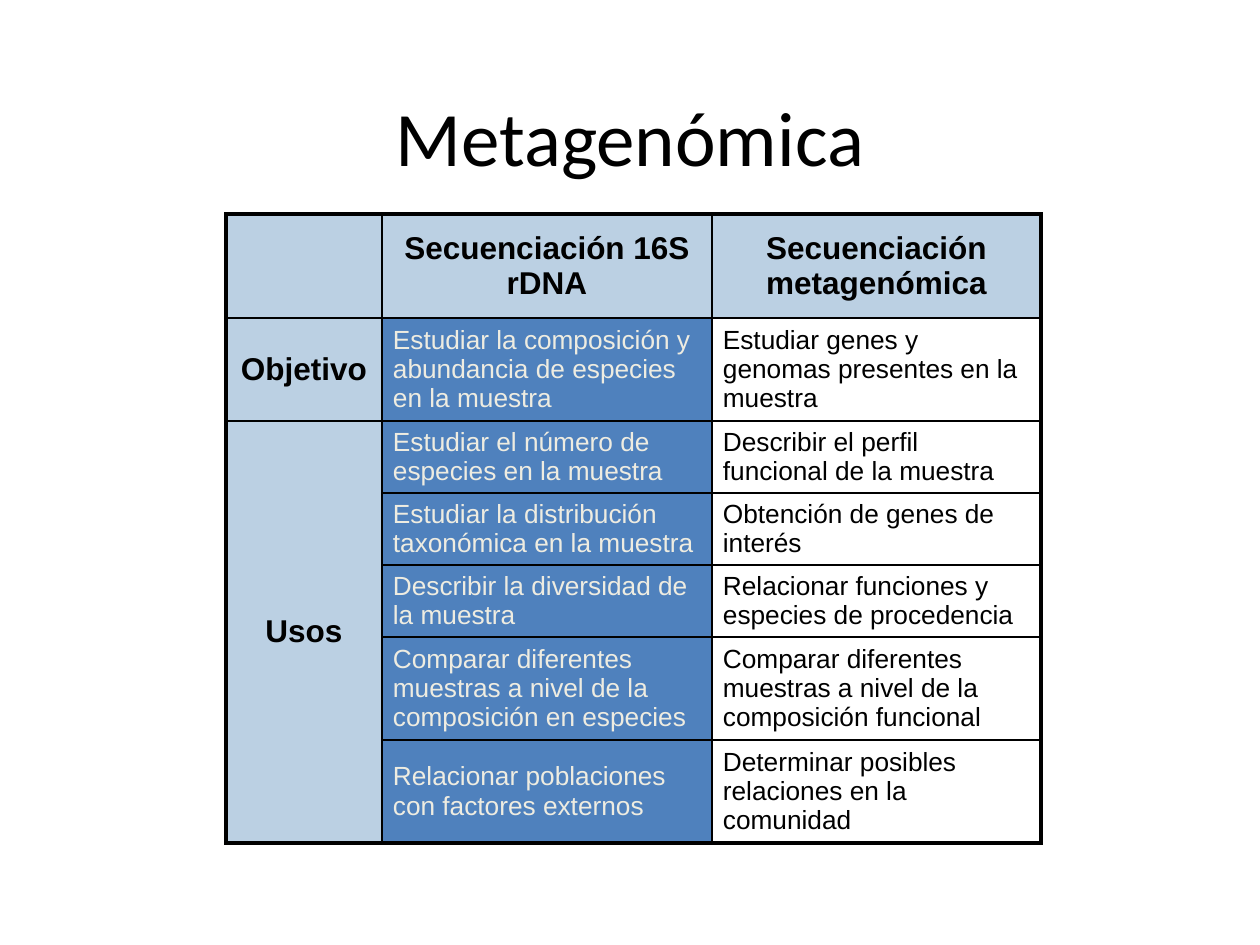
from dataclasses import dataclass

from lxml import etree
from pptx import Presentation
from pptx.dml.color import RGBColor
from pptx.enum.text import MSO_ANCHOR, PP_ALIGN
from pptx.oxml.ns import qn
from pptx.util import Emu, Pt

MIDDLE = MSO_ANCHOR.MIDDLE
LEFT, CENTER = PP_ALIGN.LEFT, PP_ALIGN.CENTER
TITLE_ONLY = 5

EMU_PER_PX = 914400 / 126
BLACK, CREAM = "000000", "EEECE1"
PALE_BLUE, BLUE = "BBD0E3", "4F81BD"
THIN, THICK = 1, 2.25

COLUMN_WIDTHS = [156, 330, 329]
ROW_HEIGHTS = [104, 103, 72, 72, 72, 103, 103]
USES_ROW = 2  # "Usos" spans from here to the last row

CONTENT = [
    ("", "Secuenciación 16S rDNA", "Secuenciación metagenómica"),
    ("Objetivo",
     "Estudiar la composición y abundancia de especies en la muestra",
     "Estudiar genes y genomas presentes en la muestra"),
    ("Usos",
     "Estudiar el número de especies en la muestra",
     "Describir el perfil funcional de la muestra"),
    ("",
     "Estudiar la distribución taxonómica en la muestra",
     "Obtención de genes de interés"),
    ("",
     "Describir la diversidad de la muestra",
     "Relacionar funciones y especies de procedencia"),
    ("",
     "Comparar diferentes muestras a nivel de la composición en especies",
     "Comparar diferentes muestras a nivel de la composición funcional"),
    ("",
     "Relacionar poblaciones con factores externos",
     "Determinar posibles relaciones en la comunidad"),
]


@dataclass(frozen=True)
class CellStyle:
    size: int
    bold: bool
    color: str
    fill: str | None
    align: PP_ALIGN


HEADING = CellStyle(18, True, BLACK, PALE_BLUE, CENTER)
RDNA = CellStyle(15, False, CREAM, BLUE, LEFT)
METAGENOMIC = CellStyle(15, False, BLACK, None, LEFT)


def px(length: int) -> Emu:
    return Emu(round(length * EMU_PER_PX))


def rgb(color: str) -> RGBColor:
    return RGBColor.from_string(color)


def add_run(paragraph, text: str, font: str, size: int, color: str,
            bold: bool = False) -> None:
    run = paragraph.add_run()
    run.text = text
    run.font.name = font
    run.font.size = Pt(size)
    run.font.bold = bold
    run.font.color.rgb = rgb(color)


def style_for(row: int, column: int) -> CellStyle:
    if row == 0 or column == 0:
        return HEADING
    return RDNA if column == 1 else METAGENOMIC


def set_borders(cell, row: int, column: int) -> None:
    """Thick lines on the outside of the table, thin ones inside."""
    bottom_row = row + (cell.span_height if cell.is_merge_origin else 1) - 1
    outside = {
        "a:lnL": column == 0,
        "a:lnR": column == len(COLUMN_WIDTHS) - 1,
        "a:lnT": row == 0,
        "a:lnB": bottom_row == len(ROW_HEIGHTS) - 1,
    }
    properties = cell._tc.get_or_add_tcPr()
    for position, (tag, is_outside) in enumerate(outside.items()):
        line = etree.Element(qn(tag), w=str(Pt(THICK if is_outside else THIN)))
        solid = etree.SubElement(line, qn("a:solidFill"))
        etree.SubElement(solid, qn("a:srgbClr"), val=BLACK)
        properties.insert(position, line)


def fill_cell(cell, text: str, style: CellStyle) -> None:
    cell.vertical_anchor = MIDDLE
    cell.margin_left = cell.margin_right = px(11)
    cell.margin_top = cell.margin_bottom = px(6)
    if style.fill:
        cell.fill.solid()
        cell.fill.fore_color.rgb = rgb(style.fill)
    else:
        cell.fill.background()
    if text:
        paragraph = cell.text_frame.paragraphs[0]
        paragraph.alignment = style.align
        add_run(paragraph, text, "Arial", style.size, style.color, style.bold)


def add_title(slide, text: str) -> None:
    title = slide.shapes.title
    title.left, title.top = px(63), px(57)
    title.width, title.height = px(1134), px(157)
    title.text_frame.vertical_anchor = MIDDLE
    paragraph = title.text_frame.paragraphs[0]
    paragraph.alignment = CENTER
    add_run(paragraph, text, "Calibri", 44, BLACK)


def add_comparison(slide) -> None:
    table = slide.shapes.add_table(
        len(ROW_HEIGHTS), len(COLUMN_WIDTHS), px(226), px(214),
        px(sum(COLUMN_WIDTHS)), px(sum(ROW_HEIGHTS))).table
    table.first_row = table.horz_banding = False
    for column, width in zip(table.columns, COLUMN_WIDTHS):
        column.width = px(width)
    for row, height in zip(table.rows, ROW_HEIGHTS):
        row.height = px(height)
    table.cell(USES_ROW, 0).merge(table.cell(len(ROW_HEIGHTS) - 1, 0))

    for row, texts in enumerate(CONTENT):
        for column, text in enumerate(texts):
            cell = table.cell(row, column)
            fill_cell(cell, text, style_for(row, column))
            set_borders(cell, row, column)


def main() -> None:
    presentation = Presentation()
    presentation.slide_width, presentation.slide_height = px(1260), px(945)
    slide = presentation.slides.add_slide(
        presentation.slide_layouts[TITLE_ONLY])

    # Title above, comparison of the two methods below
    add_title(slide, "Metagenómica")
    add_comparison(slide)
    presentation.save("out.pptx")


if __name__ == "__main__":
    main()
